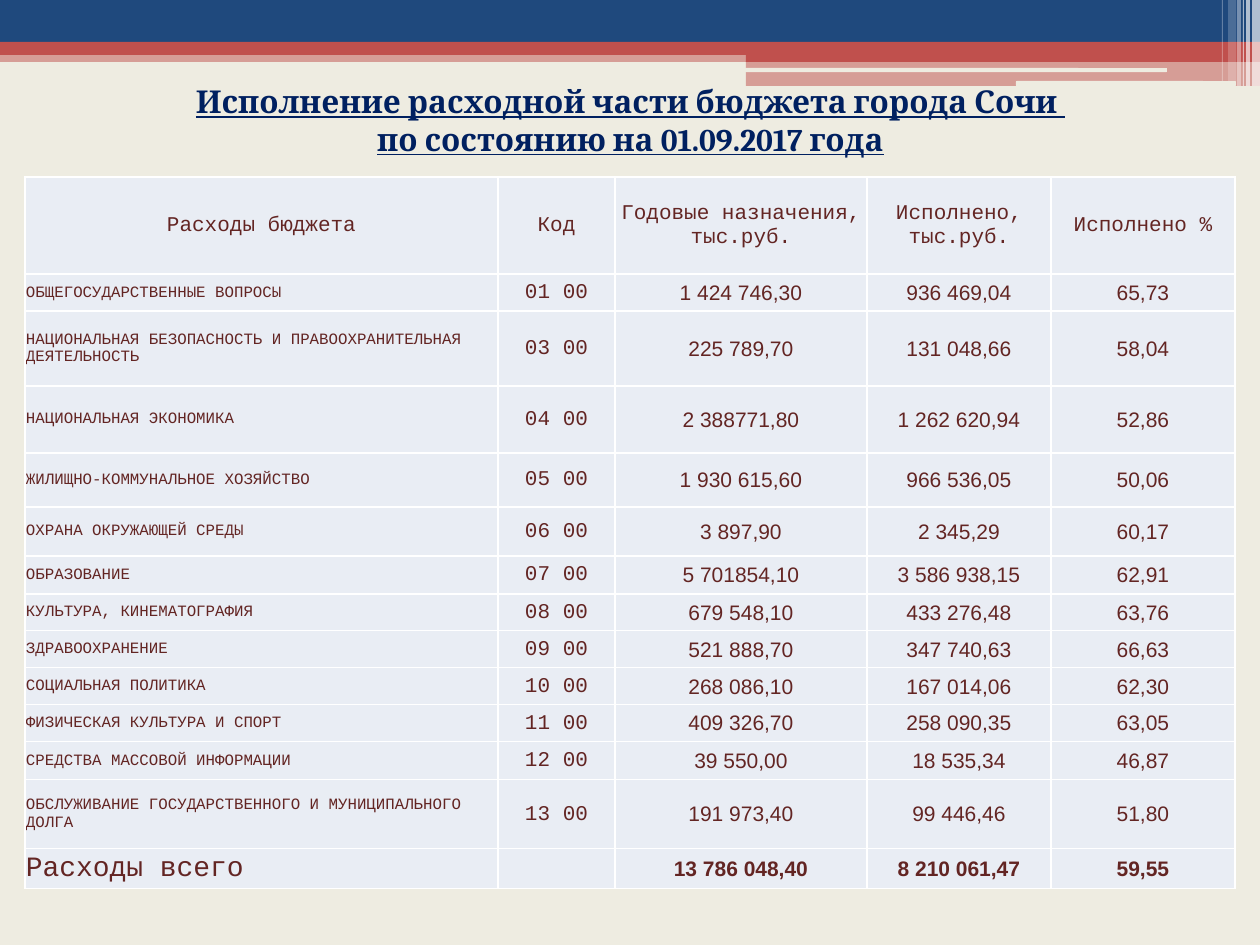
from dataclasses import dataclass

from lxml import etree
from pptx import Presentation
from pptx import util as u
from pptx.dml.color import RGBColor
from pptx.enum import shapes, text
from pptx.oxml import ns

EMU_PER_PX = 914400 / 126


@dataclass(frozen=True)
class Theme:
    background: str = "EEECE1"
    blue: str = "1F497D"
    red: str = "C0504D"
    white: str = "FFFFFF"
    title: str = "002060"
    table_text: str = "632523"
    cell: str = "E9EDF4"
    title_font: str = "Cambria"
    label_font: str = "Courier New"
    number_font: str = "Arial"
    title_size: int = 18
    body_size: int = 12
    label_size: int = 9
    total_size: int = 16
    border_width: int = 1


THEME = Theme()


@dataclass(frozen=True)
class Bar:
    left: int
    top: int
    width: int
    height: int
    color: str
    opacity: int = 100
    rounded: bool = False


@dataclass(frozen=True)
class Row:
    height: int
    values: tuple[str, ...]


BARS = (
    Bar(0, 50, 1260, 12, THEME.red, 50),
    Bar(0, 0, 1260, 43, THEME.blue),
    Bar(0, 42, 1260, 13, THEME.red),
    Bar(746, 49, 514, 13, THEME.red),
    Bar(746, 61, 514, 25, THEME.red, 50),
    Bar(745, 68, 422, 4, THEME.background, rounded=True),
    Bar(1016, 81, 220, 5, THEME.background, rounded=True),
    Bar(1252, 0, 8, 86, THEME.white, 65),
    Bar(1246, 0, 4, 86, THEME.white, 65),
    Bar(1243, 0, 1, 86, THEME.white, 60),
    Bar(1237, 0, 4, 86, THEME.white, 40),
    Bar(1228, 0, 8, 81, THEME.white, 20),
    Bar(1222, 0, 1, 81, THEME.white, 30),
)

TITLE = (
    "Исполнение расходной части бюджета города Сочи ",
    "по состоянию на 01.09.2017 года",
)
COLUMN_WIDTHS = (473, 117, 252, 184, 184)
ROWS = (
    Row(97, ("Расходы бюджета", "Код", "Годовые назначения, тыс.руб.", "Исполнено, тыс.руб.", "Исполнено %")),
    Row(37, ("ОБЩЕГОСУДАРСТВЕННЫЕ ВОПРОСЫ", "01 00", "1 424 746,30", "936 469,04", "65,73")),
    Row(75, ("НАЦИОНАЛЬНАЯ БЕЗОПАСНОСТЬ И ПРАВООХРАНИТЕЛЬНАЯ ДЕЯТЕЛЬНОСТЬ",
             "03 00", "225 789,70", "131 048,66", "58,04")),
    Row(67, ("НАЦИОНАЛЬНАЯ ЭКОНОМИКА", "04 00", "2 388771,80", "1 262 620,94", "52,86")),
    Row(54, ("ЖИЛИЩНО-КОММУНАЛЬНОЕ ХОЗЯЙСТВО", "05 00", "1 930 615,60", "966 536,05", "50,06")),
    Row(49, ("ОХРАНА ОКРУЖАЮЩЕЙ СРЕДЫ", "06 00", "3 897,90", "2 345,29", "60,17")),
    Row(38, ("ОБРАЗОВАНИЕ", "07 00", "5 701854,10", "3 586 938,15", "62,91")),
    Row(37, ("КУЛЬТУРА, КИНЕМАТОГРАФИЯ", "08 00", "679 548,10", "433 276,48", "63,76")),
    Row(37, ("ЗДРАВООХРАНЕНИЕ", "09 00", "521 888,70", "347 740,63", "66,63")),
    Row(37, ("СОЦИАЛЬНАЯ ПОЛИТИКА", "10 00", "268 086,10", "167 014,06", "62,30")),
    Row(37, ("ФИЗИЧЕСКАЯ КУЛЬТУРА И СПОРТ", "11 00", "409 326,70", "258 090,35", "63,05")),
    Row(38, ("СРЕДСТВА МАССОВОЙ ИНФОРМАЦИИ", "12 00", "39 550,00", "18 535,34", "46,87")),
    Row(69, ("ОБСЛУЖИВАНИЕ ГОСУДАРСТВЕННОГО И МУНИЦИПАЛЬНОГО ДОЛГА",
             "13 00", "191 973,40", "99 446,46", "51,80")),
    Row(40, ("Расходы всего", "", "13 786 048,40", "8 210 061,47", "59,55")),
)


def px(length: int) -> u.Emu:
    return u.Emu(round(length * EMU_PER_PX))


def write_text(paragraph, content: str, *, font: str, size: int, color: str,
               bold: bool = False, underline: bool = False, centered: bool = True) -> None:
    paragraph.alignment = text.PP_ALIGN.CENTER if centered else text.PP_ALIGN.LEFT
    run = paragraph.add_run()
    run.text = content
    run.font.name = font
    run.font.size = u.Pt(size)
    run.font.bold = bold
    run.font.underline = underline
    run.font.color.rgb = RGBColor.from_string(color)


def draw_bar(slide, bar: Bar) -> None:
    kind = shapes.MSO_SHAPE.ROUNDED_RECTANGLE if bar.rounded else shapes.MSO_SHAPE.RECTANGLE
    shape = slide.shapes.add_shape(kind, px(bar.left), px(bar.top), px(bar.width), px(bar.height))
    shape.shadow.inherit = False
    shape.line.fill.background()
    shape.fill.solid()
    shape.fill.fore_color.rgb = RGBColor.from_string(bar.color)
    if bar.opacity < 100:
        color = shape.fill._xPr.find(".//" + ns.qn("a:srgbClr"))
        etree.SubElement(color, ns.qn("a:alpha"), val=str(bar.opacity * 1000))


def draw_title(slide) -> None:
    box = slide.shapes.add_textbox(px(25), px(76), px(1211), px(90))
    frame = box.text_frame
    frame.word_wrap = True
    for index, line in enumerate(TITLE):
        paragraph = frame.add_paragraph() if index else frame.paragraphs[0]
        write_text(paragraph, line, font=THEME.title_font, size=THEME.title_size,
                   color=THEME.title, bold=True, underline=True)


def style_cell(cell) -> None:
    """Set the insets, the borders and the fill of a table cell."""
    cell.vertical_anchor = text.MSO_ANCHOR.MIDDLE
    cell.margin_left = cell.margin_right = cell.margin_top = px(1)
    cell.margin_bottom = 0
    properties = cell._tc.get_or_add_tcPr()
    for side in ("lnL", "lnR", "lnT", "lnB"):
        line = etree.SubElement(properties, ns.qn(f"a:{side}"), w=str(u.Pt(THEME.border_width)))
        fill = etree.SubElement(line, ns.qn("a:solidFill"))
        etree.SubElement(fill, ns.qn("a:srgbClr"), val=THEME.white)
    cell.fill.solid()
    cell.fill.fore_color.rgb = RGBColor.from_string(THEME.cell)


def draw_table(slide) -> None:
    height = sum(row.height for row in ROWS)
    frame = slide.shapes.add_table(len(ROWS), len(COLUMN_WIDTHS), px(25), px(177),
                                   px(sum(COLUMN_WIDTHS)), px(height))
    table = frame.table
    table.first_row = table.horz_banding = False
    for column, width in zip(table.columns, COLUMN_WIDTHS):
        column.width = px(width)
    last = len(ROWS) - 1
    for row_index, row in enumerate(ROWS):
        table.rows[row_index].height = px(row.height)
        for column_index, value in enumerate(row.values):
            cell = table.cell(row_index, column_index)
            style_cell(cell)
            is_label = row_index > 0 and column_index == 0
            is_number = row_index > 0 and column_index > 1
            size = THEME.body_size
            if is_label:
                size = THEME.total_size if row_index == last else THEME.label_size
            write_text(cell.text_frame.paragraphs[0], value,
                       font=THEME.number_font if is_number else THEME.label_font,
                       size=size, color=THEME.table_text,
                       bold=is_number and row_index == last, centered=not is_label)


def main() -> None:
    presentation = Presentation()
    presentation.slide_width = px(1260)
    presentation.slide_height = px(945)
    slide = presentation.slides.add_slide(presentation.slide_layouts[6])
    slide.background.fill.solid()
    slide.background.fill.fore_color.rgb = RGBColor.from_string(THEME.background)
    for bar in BARS:
        draw_bar(slide, bar)
    draw_table(slide)
    draw_title(slide)
    presentation.save("out.pptx")


if __name__ == "__main__":
    main()
